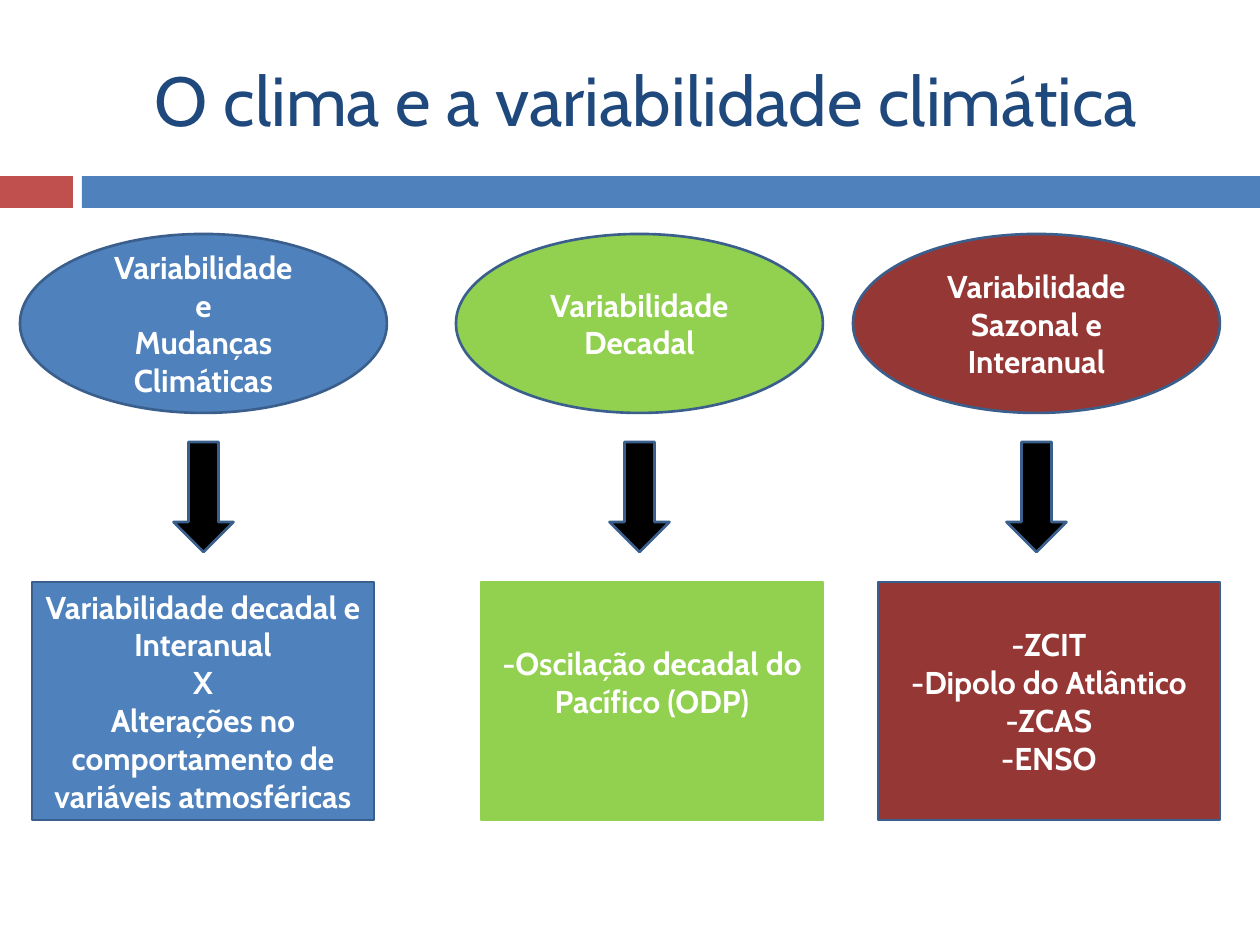
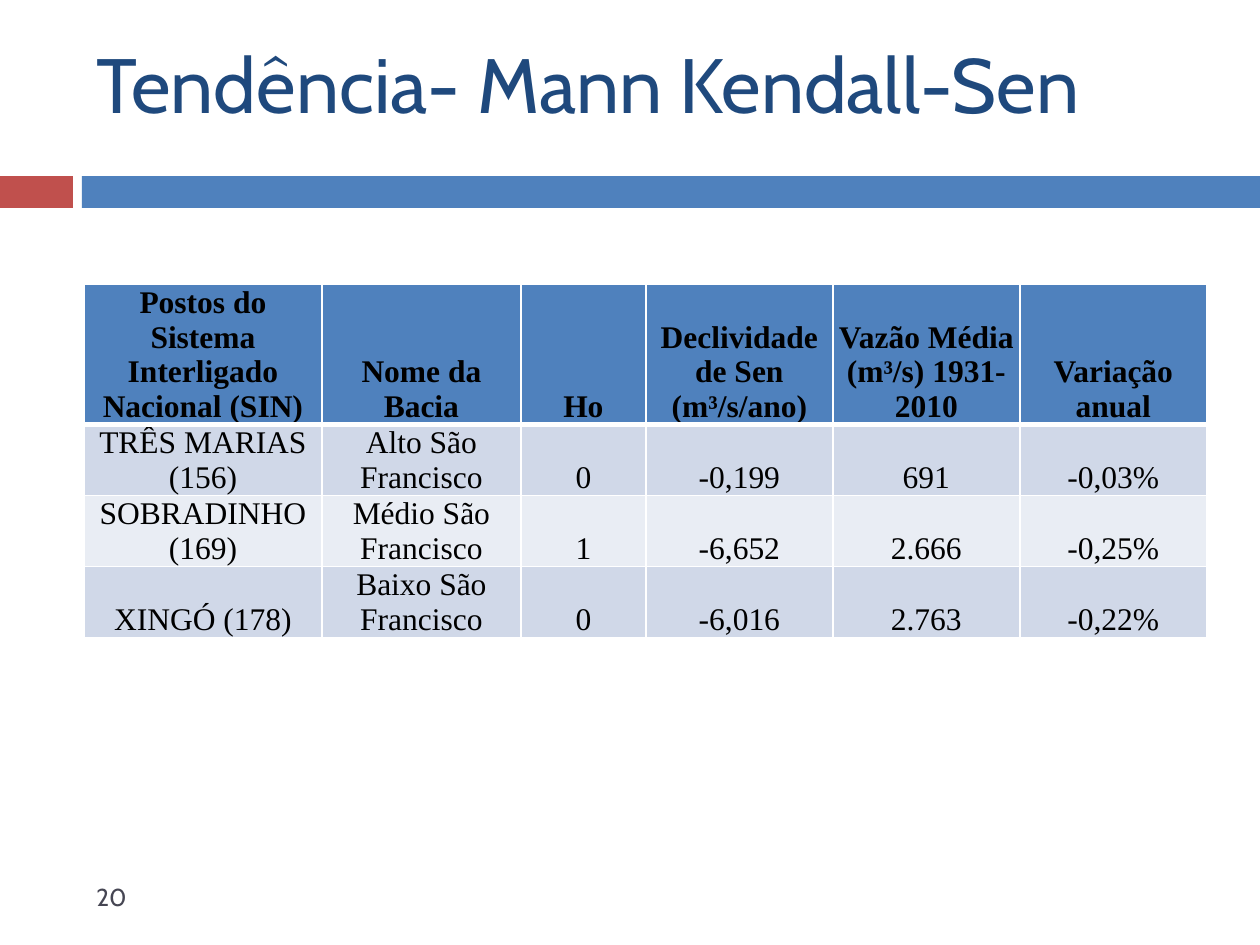
from lxml.etree import SubElement
from pptx import Presentation
from pptx.dml.color import RGBColor
from pptx.enum.shapes import MSO_SHAPE
from pptx.enum.text import MSO_ANCHOR, MSO_AUTO_SIZE, PP_ALIGN
from pptx.oxml.ns import qn
from pptx.util import Emu, Pt

PX_PER_INCH = 126
WHITE = RGBColor(0xFF, 0xFF, 0xFF)
BLACK = RGBColor(0x00, 0x00, 0x00)
BLUE = RGBColor(0x4F, 0x81, 0xBD)
RED = RGBColor(0xC0, 0x50, 0x4D)
NAVY = RGBColor(0x1F, 0x49, 0x7D)
OUTLINE = RGBColor(0x3A, 0x5F, 0x8C)
GREEN = RGBColor(0x92, 0xD0, 0x50)
MAROON = RGBColor(0x95, 0x37, 0x35)
GRAY = RGBColor(0x46, 0x46, 0x53)
DARK_ROW = RGBColor(0xD0, 0xD8, 0xE8)
LIGHT_ROW = RGBColor(0xE9, 0xED, 0xF4)
HEADING_FONT = "Cabin"
TABLE_FONT = "Times New Roman"

TIME_SCALES = [
    (20, 12, BLUE, OUTLINE, 6,
     ["Variabilidade", "e", "Mudanças Climáticas"],
     ["Variabilidade decadal e Interanual", "X",
      "Alterações no comportamento de variáveis atmosféricas"]),
    (456, 25, GREEN, GREEN, 44,
     ["Variabilidade", "Decadal"],
     ["-Oscilação decadal do Pacífico (ODP)"]),
    (853, 25, MAROON, OUTLINE, 6,
     ["Variabilidade", "Sazonal e Interanual"],
     ["-ZCIT", "-Dipolo do Atlântico", "-ZCAS", "-ENSO"]),
]

TREND_ROWS = [
    ["Postos do Sistema Interligado Nacional (SIN)", "Nome da Bacia", "Ho",
     "Declividade de Sen (m³/s/ano)", "Vazão Média (m³/s) 1931-2010",
     "Variação anual"],
    ["TRÊS MARIAS (156)", "Alto São Francisco", "0", "-0,199", "691", "-0,03%"],
    ["SOBRADINHO (169)", "Médio São Francisco", "1", "-6,652", "2.666", "-0,25%"],
    ["XINGÓ (178)", "Baixo São Francisco", "0", "-6,016", "2.763", "-0,22%"],
]
COLUMN_WIDTHS = [238, 199, 125, 187, 187, 187]
ROW_HEIGHTS = [140, 71, 71, 71]


def px(length):
    """Turn pixels into EMU."""
    return Emu(round(length * 914400 / PX_PER_INCH))


def format_text(text_frame, size, color, font=HEADING_FONT, bold=False,
                align=PP_ALIGN.CENTER):
    """Format every paragraph and run of a text frame."""
    for paragraph in text_frame.paragraphs:
        paragraph.alignment = align
        for run in paragraph.runs:
            run.font.name = font
            run.font.size = Pt(size)
            run.font.bold = bold
            run.font.color.rgb = color


def add_filled_shape(slide, kind, left, top, width, height, fill, line=None):
    """Add a flat preset shape, outlined when a line colour is given."""
    shape = slide.shapes.add_shape(kind, px(left), px(top), px(width), px(height))
    shape.shadow.inherit = False
    shape.fill.solid()
    shape.fill.fore_color.rgb = fill
    if line is None:
        shape.line.fill.background()
    else:
        shape.line.color.rgb = line
        shape.line.width = Pt(1.5)
    return shape


def add_label_shape(slide, kind, left, top, width, height, fill, line, lines):
    """Add a shape with centred bold white lines of text."""
    shape = add_filled_shape(slide, kind, left, top, width, height, fill, line)
    text_frame = shape.text_frame
    text_frame.text = "\n".join(lines)
    text_frame.word_wrap = True
    text_frame.vertical_anchor = MSO_ANCHOR.MIDDLE
    format_text(text_frame, 18, WHITE, bold=True)
    return shape


def add_titled_slide(presentation, title, top, size, align):
    """Add a slide with the shared bands and title style."""
    slide = presentation.slides.add_slide(presentation.slide_layouts[5])
    for left, width, color in ((0, 73, RED), (82, 1178, BLUE)):
        add_filled_shape(slide, MSO_SHAPE.RECTANGLE, left, 176, width, 32, color)
    placeholder = slide.shapes.title
    placeholder.left, placeholder.top = px(84), px(top)
    placeholder.width, placeholder.height = px(1124), px(136)
    text_frame = placeholder.text_frame
    text_frame.text = title
    text_frame.auto_size = MSO_AUTO_SIZE.NONE
    text_frame.vertical_anchor = MSO_ANCHOR.MIDDLE
    format_text(text_frame, size, NAVY, align=align)
    return slide


def add_time_scale(slide, left, top, box_offset, color, box_line, box_inset,
                   heading, details):
    """Add one column: ellipse, arrow and detail box."""
    width, arrow_width = 367, 60
    add_label_shape(slide, MSO_SHAPE.OVAL, left, top, width, 179,
                    color, OUTLINE, heading)
    add_filled_shape(slide, MSO_SHAPE.DOWN_ARROW,
                     left + (width - arrow_width) / 2, top + 208,
                     arrow_width, 110, BLACK, OUTLINE)
    box = add_label_shape(slide, MSO_SHAPE.RECTANGLE, left + box_offset,
                          top + 348, 342, 238, color, box_line, details)
    box.text_frame.margin_bottom = px(box_inset)


def add_border(cell, side, points):
    """Add a white border to one side of a table cell."""
    line = SubElement(cell._tc.get_or_add_tcPr(), qn(f"a:ln{side}"),
                      w=str(Pt(points)))
    fill = SubElement(line, qn("a:solidFill"))
    SubElement(fill, qn("a:srgbClr"), val=str(WHITE))


def format_cell(cell, text, row_index):
    """Fill, border and label a table cell according to its row."""
    top = 3 if row_index == 1 else 1
    bottom = 3 if row_index == 0 else 1
    for side, points in (("L", 1), ("R", 1), ("T", top), ("B", bottom)):
        add_border(cell, side, points)
    cell.fill.solid()
    if row_index == 0:
        cell.fill.fore_color.rgb = BLUE
    else:
        cell.fill.fore_color.rgb = DARK_ROW if row_index % 2 else LIGHT_ROW
    cell.margin_left = cell.margin_right = cell.margin_top = px(1)
    cell.margin_bottom = 0
    cell.vertical_anchor = MSO_ANCHOR.BOTTOM
    cell.text_frame.text = text
    format_text(cell.text_frame, 18, BLACK, TABLE_FONT, bold=row_index == 0)


def add_trend_table(slide, left, top):
    """Add the table of river flow trends."""
    table = slide.shapes.add_table(
        len(ROW_HEIGHTS), len(COLUMN_WIDTHS), px(left), px(top),
        px(sum(COLUMN_WIDTHS)), px(sum(ROW_HEIGHTS))).table
    for column, width in zip(table.columns, COLUMN_WIDTHS):
        column.width = px(width)
    for row_index, texts in enumerate(TREND_ROWS):
        table.rows[row_index].height = px(ROW_HEIGHTS[row_index])
        for column_index, text in enumerate(texts):
            format_cell(table.cell(row_index, column_index), text, row_index)


def add_page_number(slide, left, top, number):
    """Add the page number at the foot of a slide."""
    text_box = slide.shapes.add_textbox(px(left), px(top), px(273), px(50))
    text_box.text_frame.word_wrap = True
    text_box.text_frame.text = number
    format_text(text_box.text_frame, 14, GRAY, align=PP_ALIGN.LEFT)


def build_variability_slide(presentation):
    """Build the slide on climate variability."""
    slide = add_titled_slide(presentation, "O clima e a variabilidade climática",
                             31, 39.6, PP_ALIGN.CENTER)
    for left, *details in TIME_SCALES:
        add_time_scale(slide, left, 234, *details)


def build_trend_slide(presentation):
    """Build the slide with the trend table."""
    slide = add_titled_slide(presentation, "Tendência- Mann Kendall-Sen",
                             15, 44, PP_ALIGN.LEFT)
    add_trend_table(slide, 84, 284)
    add_page_number(slide, 84, 876, "20")


def main():
    """Build and save the presentation."""
    presentation = Presentation()
    presentation.slide_width, presentation.slide_height = px(1260), px(945)
    build_variability_slide(presentation)
    build_trend_slide(presentation)
    presentation.save("out.pptx")


if __name__ == "__main__":
    main()
